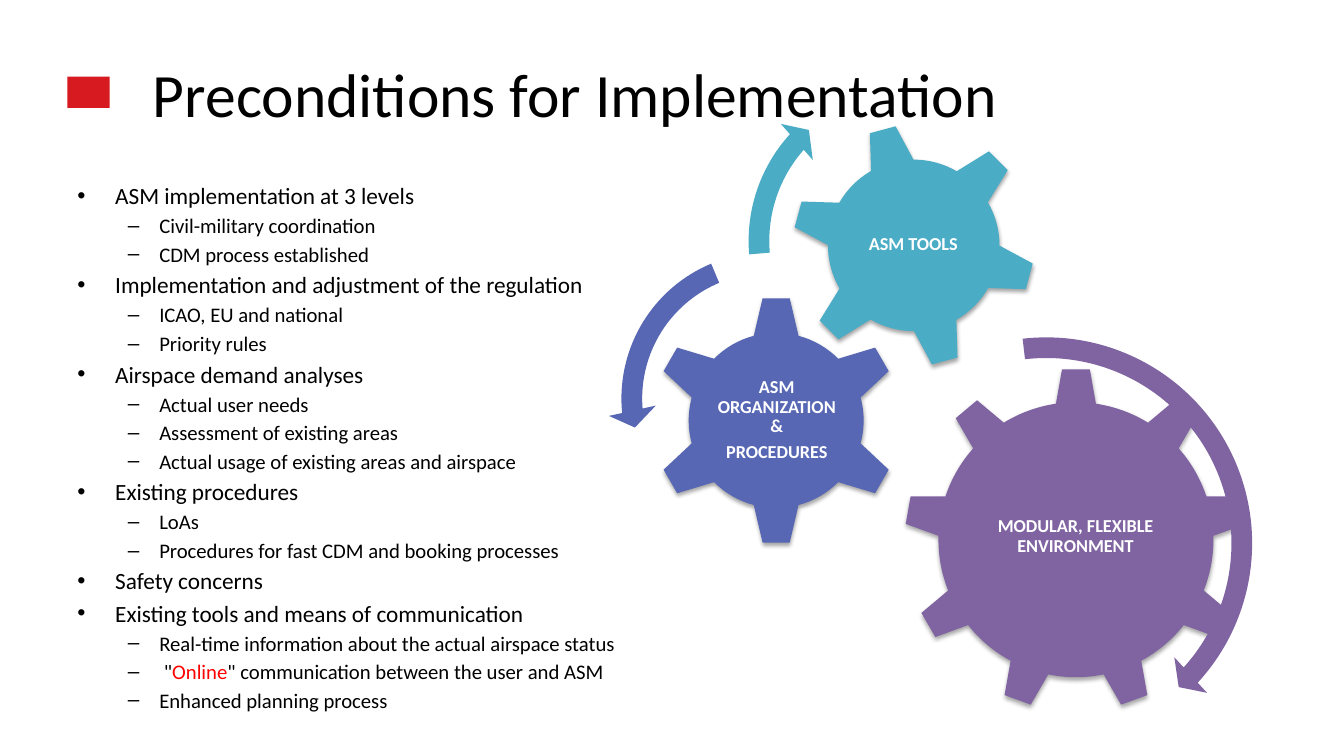
import pptx
import pptx.util
import pptx.dml.color
import pptx.enum.shapes
import pptx.enum.text
import lxml.etree

Pt = pptx.util.Pt
Kind = pptx.enum.shapes.MSO_SHAPE
Anchor = pptx.enum.text.MSO_ANCHOR
A = "http://schemas.openxmlformats.org/drawingml/2006/main"
SHADOW = (
    f'<a:effectLst xmlns:a="{A}"><a:outerShdw blurRad="{Pt(3.1)}" dist="{Pt(1.8)}" '
    'dir="5400000" rotWithShape="0"><a:srgbClr val="000000"><a:alpha val="35000"/>'
    "</a:srgbClr></a:outerShdw></a:effectLst>"
)


def color(value):
    return pptx.dml.color.RGBColor.from_string(value)


def draw(kind, left, top, width, height, fill):
    shape = slide.shapes.add_shape(kind, Pt(left), Pt(top), Pt(width), Pt(height))
    shape.shadow.inherit = False
    shape.fill.solid()
    shape.fill.fore_color.rgb = color(fill)
    shape.line.fill.background()
    return shape


deck = pptx.Presentation()
deck.slide_width, deck.slide_height = Pt(960), Pt(540)
slide = deck.slides.add_slide(deck.slide_layouts[6])

# Title with its red marker
draw(Kind.RECTANGLE, 48.2, 54.7, 30.2, 22.3, "D71920")
title = slide.shapes.add_textbox(Pt(102.2), Pt(21.6), Pt(810), Pt(90)).text_frame
title.word_wrap = True
title.vertical_anchor = Anchor.MIDDLE
head = title.paragraphs[0]
head.text = "Preconditions for Implementation"
head.font.name, head.font.size = "Calibri", Pt(44)
head.font.color.rgb = color("000000")

# Bullet list: level and text
items = [
    (0, "ASM implementation at 3 levels"),
    (1, "Civil-military coordination"),
    (1, "CDM process established"),
    (0, "Implementation and adjustment of the regulation"),
    (1, "ICAO, EU and national"),
    (1, "Priority rules"),
    (0, "Airspace demand analyses"),
    (1, "Actual user needs"),
    (1, "Assessment of existing areas"),
    (1, "Actual usage of existing areas and airspace"),
    (0, "Existing procedures"),
    (1, "LoAs"),
    (1, "Procedures for fast CDM and booking processes"),
    (0, "Safety concerns"),
    (0, "Existing tools and means of communication"),
    (1, "Real-time information about the actual airspace status"),
    (1, ' "Online" communication between the user and ASM'),
    (1, "Enhanced planning process"),
]
# Per level: left margin, hanging indent, bullet, size, space before
styles = [(27, 27, "•", 16.6, 3.1), (58.5, 22.5, "–", 14.8, 2.6)]
body = slide.shapes.add_textbox(Pt(48.2), Pt(126), Pt(399.6), Pt(356.4)).text_frame
body.word_wrap = True
for i, (level, text) in enumerate(items):
    left, hang, mark, size, gap = styles[level]
    para = body.add_paragraph() if i else body.paragraphs[0]
    para.level = level
    props = para._p.get_or_add_pPr()
    props.set("marL", str(Pt(left)))
    props.set("indent", str(-Pt(hang)))
    lxml.etree.SubElement(props, f"{{{A}}}buFont", typeface="Arial")
    lxml.etree.SubElement(props, f"{{{A}}}buChar", char=mark)
    if i:
        para.space_before = Pt(gap)
    para.font.name, para.font.size = "Calibri", Pt(size)
    para.font.color.rgb = color("000000")
    before, word, after = text.partition("Online")
    para.add_run().text = before
    if word:
        run = para.add_run()
        run.text = word
        run.font.color.rgb = color("FF0000")
        para.add_run().text = after

# Gears: kind, left, top, side, turn, fill, label box, label lines
gears = [
    (Kind.GEAR_9, 645.8, 262.8, 245.5, 0, "8064A2",
     (694.8, 320.4, 146.9, 126), ["MODULAR, FLEXIBLE ENVIRONMENT"]),
    (Kind.GEAR_6, 465.1, 211, 178.6, 0, "5767B4",
     (510.5, 256.3, 88.6, 87.8), ["ASM ORGANIZATION &", "PROCEDURES"]),
    (Kind.GEAR_6, 565.2, 87.8, 175, 345, "4BACC6",
     (603.4, 126, 97.9, 97.9), ["ASM TOOLS"]),
]
for kind, left, top, side, turn, fill, box, lines in gears:
    gear = draw(kind, left, top, side, side, fill)
    gear.rotation = turn
    props = gear._element.spPr
    props.replace(props.find(f"{{{A}}}effectLst"), lxml.etree.fromstring(SHADOW))
    label = slide.shapes.add_textbox(*map(Pt, box)).text_frame
    label.word_wrap = True
    label.vertical_anchor = Anchor.MIDDLE
    label.margin_left = label.margin_right = Pt(1.4)
    label.margin_top = label.margin_bottom = Pt(1.4)
    for i, text in enumerate(lines):
        para = label.add_paragraph() if i else label.paragraphs[0]
        para.text = text
        para.alignment = pptx.enum.text.PP_ALIGN.CENTER
        para.line_spacing = 0.9
        para.space_after = Pt(4.5)
        para.font.name, para.font.size = "Calibri", Pt(13)
        para.font.bold = True
        para.font.color.rgb = color("FFFFFF")

# Curved arrows: kind, left, top, side, fill, adjustments
arrows = [
    (Kind.CIRCULAR_ARROW, 590.4, 231.1, 313.9, "8064A2",
     (0.047, 2.99, 25.428, 158.05, 0.055)),
    (Kind.LEFT_CIRCULAR_ARROW, 434.2, 170.6, 228.2, "5767B4",
     (0.065, 4.3, 104.891, 148.378, 0.075)),
    (Kind.CIRCULAR_ARROW, 524.9, 49, 246.2, "4BACC6",
     (0.06, 3.941, 133.138, 105.082, 0.07)),
]
for kind, left, top, side, fill, shifts in arrows:
    arrow = draw(kind, left, top, side, side, fill)
    for i, shift in enumerate(shifts):
        arrow.adjustments[i] = shift

deck.save("out.pptx")
